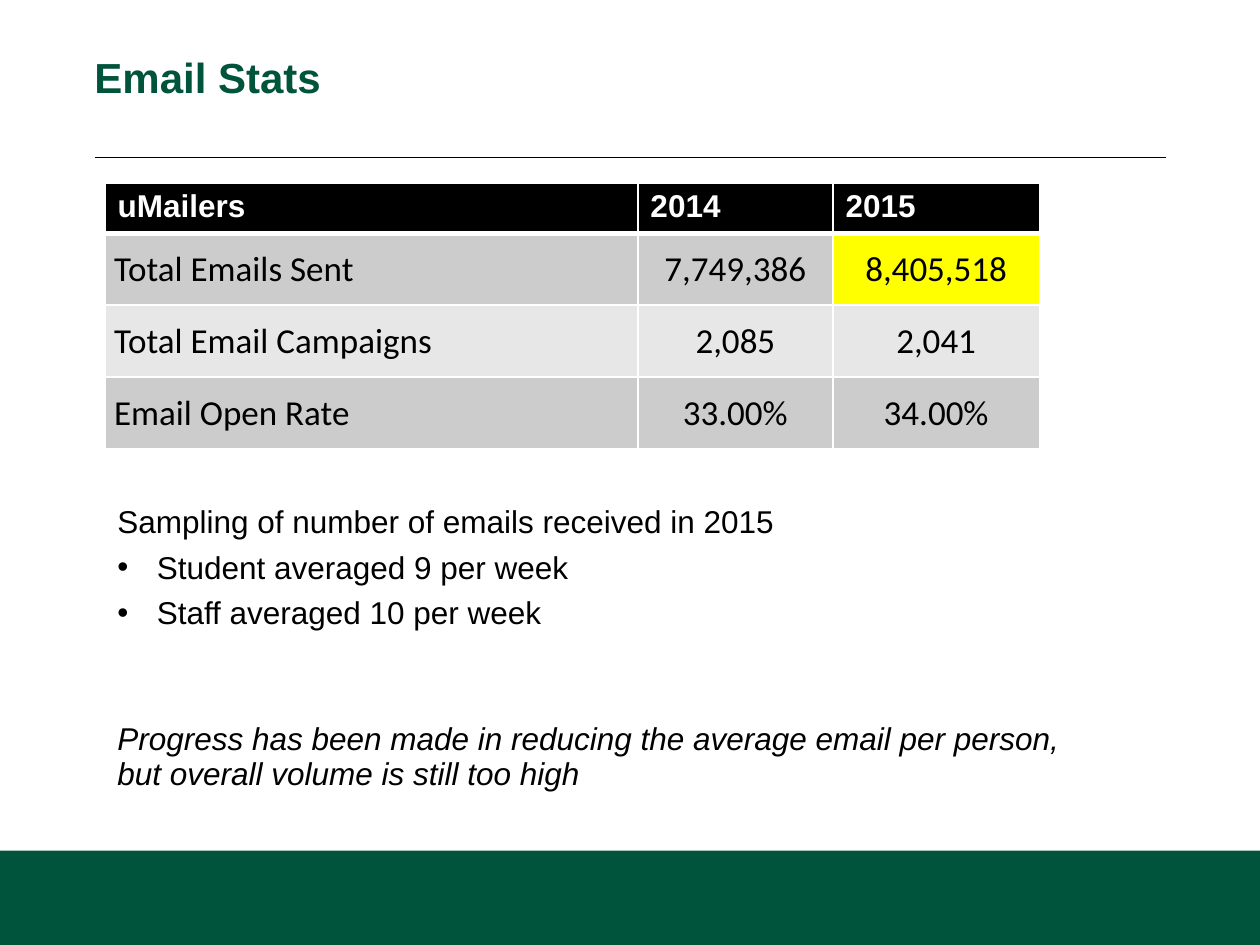
from dataclasses import dataclass

from lxml.etree import SubElement
from pptx import Presentation
from pptx.dml.color import RGBColor
from pptx.enum.shapes import MSO_CONNECTOR, MSO_SHAPE
from pptx.enum.text import MSO_ANCHOR, PP_ALIGN
from pptx.oxml import parse_xml
from pptx.oxml.ns import nsdecls, qn
from pptx.util import Pt

GREEN = RGBColor(0x00, 0x54, 0x3C)
BLACK = RGBColor(0x00, 0x00, 0x00)
WHITE = RGBColor(0xFF, 0xFF, 0xFF)
YELLOW = RGBColor(0xFF, 0xFF, 0x00)
BANDS = (RGBColor(0xCC, 0xCC, 0xCC), RGBColor(0xE7, 0xE7, 0xE7))

COLUMN_WIDTHS = (304.5, 111.5, 118)
HEADER_HEIGHT = 27
ROW_HEIGHT = 41.1
STATS = (
    ("uMailers", "2014", "2015"),
    ("Total Emails Sent", "7,749,386", "8,405,518"),
    ("Total Email Campaigns", "2,085", "2,041"),
    ("Email Open Rate", "33.00%", "34.00%"),
)
HIGHLIGHT = (1, 2)


@dataclass(frozen=True)
class Note:
    text: str
    bullet: bool = False
    italic: bool = False
    before: float = 0


NOTES = (
    Note("Sampling of number of emails received in 2015"),
    Note("Student averaged 9 per week", bullet=True),
    Note("Staff averaged 10 per week", bullet=True),
    Note("Progress has been made in reducing the average email per person, "
         "but overall volume is still too high", italic=True, before=46),
)


def style_font(para, size: float, color: RGBColor, name: str = "Arial",
               bold: bool = False, italic: bool = False) -> None:
    for span in para.runs:
        font = span.font
        font.name, font.size, font.bold, font.italic = name, Pt(size), bold, italic
        font.color.rgb = color


def set_borders(cell, top: float, bottom: float) -> None:
    properties = cell._tc.get_or_add_tcPr()
    widths = {"lnL": 1, "lnR": 1, "lnT": top, "lnB": bottom}
    for index, (tag, width) in enumerate(widths.items()):
        properties.insert(index, parse_xml(
            f'<a:{tag} {nsdecls("a")} w="{Pt(width)}"><a:solidFill>'
            f'<a:srgbClr val="{WHITE}"/></a:solidFill></a:{tag}>'))


def add_frame(slide, left: float, top: float, width: float, height: float):
    frame = slide.shapes.add_textbox(Pt(left), Pt(top), Pt(width), Pt(height)).text_frame
    frame.word_wrap = True
    return frame


def add_page_furniture(slide) -> None:
    band = slide.shapes.add_shape(MSO_SHAPE.RECTANGLE, Pt(0), Pt(486), Pt(720), Pt(54))
    band.shadow.inherit = False
    band.fill.solid()
    band.fill.fore_color.rgb = GREEN
    band.line.fill.background()
    rule = slide.shapes.add_connector(MSO_CONNECTOR.STRAIGHT, Pt(54), Pt(90), Pt(666), Pt(90))
    rule.line.color.rgb = BLACK
    rule.line.width = Pt(0.5)
    SubElement(rule._element.spPr, qn("a:effectLst"))


def add_title(slide, text: str) -> None:
    frame = add_frame(slide, 54, 9.5, 611.5, 67)
    frame.margin_left = frame.margin_right = frame.margin_top = frame.margin_bottom = 0
    frame.vertical_anchor = MSO_ANCHOR.MIDDLE
    frame.text = text
    para = frame.paragraphs[0]
    para.line_spacing = Pt(30)
    style_font(para, 24, GREEN, bold=True)


def format_cell(cell, row: int, column: int) -> None:
    para = cell.text_frame.paragraphs[0]
    cell.fill.solid()
    if row == 0:
        cell.fill.fore_color.rgb = BLACK
        style_font(para, 18, WHITE, bold=True)
        set_borders(cell, top=1, bottom=3)
        return
    cell.fill.fore_color.rgb = YELLOW if (row, column) == HIGHLIGHT else BANDS[(row - 1) % 2]
    cell.vertical_anchor = MSO_ANCHOR.MIDDLE
    cell.margin_left = Pt(0.7 if column else 5.2)
    cell.margin_right = cell.margin_top = Pt(0.7)
    cell.margin_bottom = 0
    para.alignment = PP_ALIGN.CENTER if column else PP_ALIGN.LEFT
    style_font(para, 20, BLACK, name="Calibri")
    set_borders(cell, top=3 if row == 1 else 1, bottom=1)


def add_stats_table(slide) -> None:
    row_heights = [HEADER_HEIGHT] + [ROW_HEIGHT] * (len(STATS) - 1)
    table = slide.shapes.add_table(
        len(STATS), len(COLUMN_WIDTHS), Pt(60), Pt(104.5),
        Pt(sum(COLUMN_WIDTHS)), Pt(sum(row_heights))).table
    table.horz_banding = False
    for column, width in zip(table.columns, COLUMN_WIDTHS):
        column.width = Pt(width)
    for row, height in zip(table.rows, row_heights):
        row.height = Pt(height)
    for row, values in enumerate(STATS):
        for column, value in enumerate(values):
            cell = table.cell(row, column)
            cell.text_frame.text = value
            format_cell(cell, row, column)


def add_notes_box(slide) -> None:
    frame = add_frame(slide, 60, 285, 579.5, 199.5)
    for index, note in enumerate(NOTES):
        para = frame.paragraphs[0] if index == 0 else frame.add_paragraph()
        para.text = note.text
        para.line_spacing = Pt(20)
        para.space_after = Pt(6)
        if note.before:
            para.space_before = Pt(note.before)
        if note.bullet:
            properties = para._p.get_or_add_pPr()
            properties.set("marL", str(Pt(22.5)))
            properties.set("indent", str(Pt(-22.5)))
            SubElement(properties, qn("a:buFont"), typeface="Arial")
            SubElement(properties, qn("a:buChar"), char="•")
        style_font(para, 18, BLACK, italic=note.italic)


def main() -> None:
    deck = Presentation()
    deck.slide_width, deck.slide_height = Pt(720), Pt(540)
    page = deck.slides.add_slide(deck.slide_layouts[6])
    add_page_furniture(page)
    add_title(page, "Email Stats")
    add_stats_table(page)
    add_notes_box(page)
    deck.save("out.pptx")


if __name__ == "__main__":
    main()
